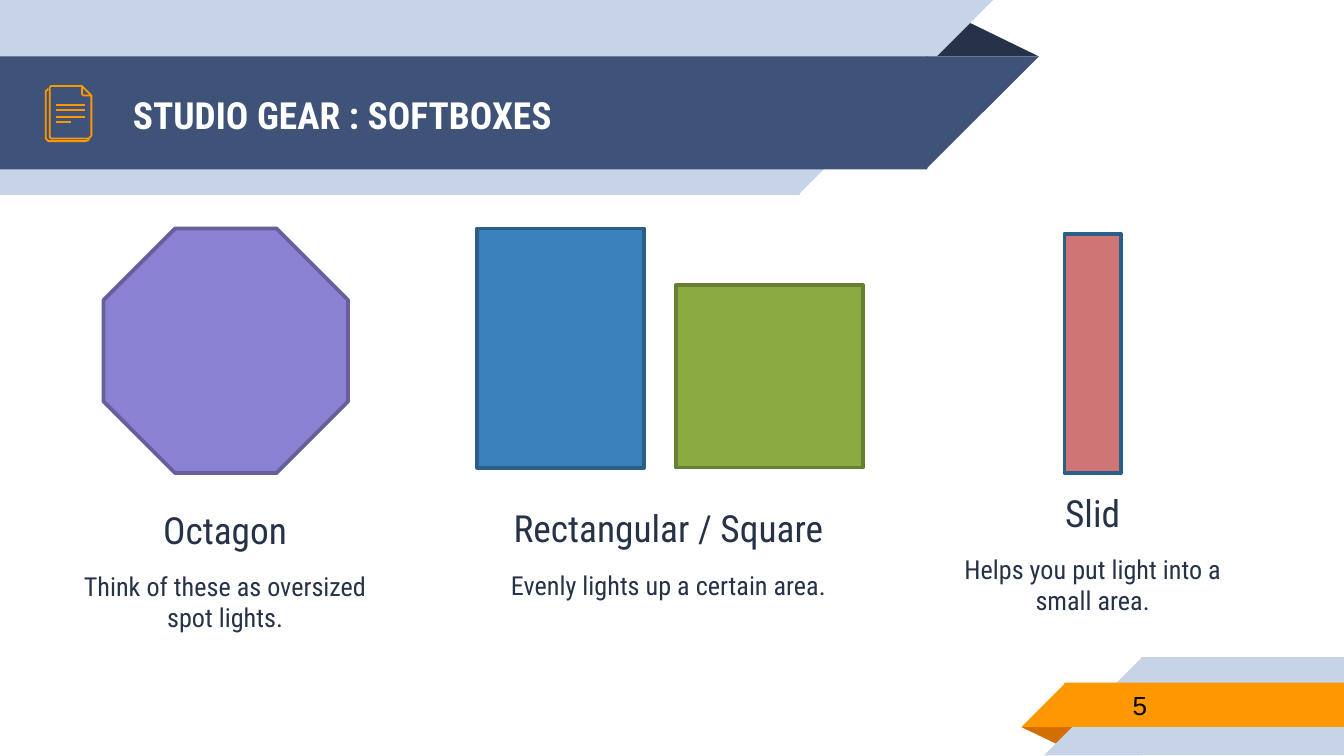
from collections import namedtuple
from dataclasses import dataclass

from lxml.etree import SubElement
from pptx import Presentation
from pptx.dml.color import RGBColor
from pptx.enum.shapes import MSO_CONNECTOR, MSO_SHAPE
from pptx.enum.text import MSO_ANCHOR, PP_ALIGN
from pptx.oxml.ns import qn
from pptx.util import Emu, Pt

PX = 9144
SEAM = 1

Box = namedtuple("Box", "left top width height")
Softbox = namedtuple("Softbox", "outline box fill line")


@dataclass(frozen=True)
class Theme:
    font: str = "Roboto Condensed"
    number_font: str = "Arial"
    heading_size: int = 20
    note_size: int = 14
    caption_gap: int = 10
    inset: int = 10
    icon_line: float = 0.96
    softbox_line: int = 2
    white: str = "FFFFFF"
    black: str = "000000"
    ink: str = "263248"
    navy: str = "3F5378"
    pale: str = "C7D3E6"
    orange: str = "FF9800"
    burnt: str = "D26F00"
    violet: str = "8B81D2"
    violet_edge: str = "675F9B"
    blue: str = "3A81BA"
    blue_edge: str = "2B5F8A"
    green: str = "8BAB42"
    green_edge: str = "677F31"
    rose: str = "D07576"


THEME = Theme()


def px(value):
    return Emu(value * PX)


def color(value):
    return RGBColor.from_string(value)


def inside(box, left, top, width, height):
    return Box(box.left + left, box.top + top, width, height)


def add_outline(slide, outline, box, fill, flip=None):
    shape = slide.shapes.add_shape(outline, *map(px, box))
    shape.shadow.inherit = False
    shape.fill.solid()
    shape.fill.fore_color.rgb = color(fill)
    shape.line.fill.background()
    if flip:
        shape._element.spPr.find(qn("a:xfrm")).set(flip, "1")
    return shape


def add_text(slide, box, lines, ink, font=THEME.font, align=PP_ALIGN.LEFT, gap=0, bold=False):
    frame = slide.shapes.add_textbox(*map(px, box)).text_frame
    frame.word_wrap = True
    frame.vertical_anchor = MSO_ANCHOR.MIDDLE
    frame.margin_left = frame.margin_right = px(THEME.inset)
    frame.margin_top = frame.margin_bottom = px(THEME.inset)
    for index, (words, size) in enumerate(lines):
        paragraph = frame.paragraphs[0] if index == 0 else frame.add_paragraph()
        paragraph.text = words
        paragraph.alignment = align
        paragraph.space_after = Pt(gap)
        paragraph.font.name = font
        paragraph.font.size = Pt(size)
        paragraph.font.bold = bold
        paragraph.font.color.rgb = color(ink)


def add_band(slide, box, top, length, height, fill):
    add_outline(slide, MSO_SHAPE.RECTANGLE, inside(box, 0, top, length + SEAM, height), fill)
    add_outline(slide, MSO_SHAPE.RIGHT_TRIANGLE,
                inside(box, length, top, height, height), fill, "flipV")


def header(slide, box, title):
    fold = add_outline(slide, MSO_SHAPE.ISOSCELES_TRIANGLE,
                       inside(box, 688, 14, 85, 28), THEME.ink)
    fold.adjustments[0] = 0.324
    add_band(slide, box, 0, 594, box.height, THEME.pale)
    add_band(slide, box, 42, 689, 84, THEME.navy)
    add_text(slide, inside(box, 89, 43, 601, 84), [(title, THEME.heading_size)],
             THEME.white, bold=True)
    document_icon(slide, inside(box, 34, 64, 34, 41))


def document_icon(slide, box):
    back_page = [(32, 39), (32, 40), (30, 41), (2, 41), (0, 39), (0, 4), (1, 3), (2, 2)]
    front_page = [(34, 7), (34, 37), (33, 38), (32, 39), (4, 39), (3, 38),
                  (3, 1), (4, 0), (27, 0)]
    folded_corner = [(27, 6), (27, 0), (34, 7), (29, 7), (28, 7)]
    for points, closed in ((back_page, False), (front_page, False), (folded_corner, True)):
        start, *rest = [(box.left + x, box.top + y) for x, y in points]
        builder = slide.shapes.build_freeform(*start, scale=PX)
        builder.add_line_segments(rest, close=closed)
        page = builder.convert_to_shape()
        page.shadow.inherit = False
        page.fill.background()
        icon_stroke(page)
    for y, length in ((14, 21), (18, 21), (23, 21), (27, 11)):
        left, top = box.left + 8, box.top + y
        rule = slide.shapes.add_connector(
            MSO_CONNECTOR.STRAIGHT, px(left + length), px(top), px(left), px(top))
        icon_stroke(rule)
        SubElement(rule._element.spPr, qn("a:effectLst"))


def icon_stroke(shape):
    shape.line.color.rgb = color(THEME.orange)
    shape.line.width = Pt(THEME.icon_line)


def footer(slide, box, number):
    fold = add_outline(slide, MSO_SHAPE.ISOSCELES_TRIANGLE,
                       inside(box, 0, 52, 43, 14), THEME.burnt)
    fold.rotation = 180
    fold.adjustments[0] = 0.324
    for left, top, height, fill in ((17, 0, box.height, THEME.pale), (0, 19, 33, THEME.orange)):
        start = left + height - SEAM
        add_outline(slide, MSO_SHAPE.RECTANGLE,
                    inside(box, start, top, box.width - start, height), fill)
        add_outline(slide, MSO_SHAPE.RIGHT_TRIANGLE,
                    inside(box, left, top, height, height), fill, "flipH")
    add_text(slide, inside(box, 73, 18, 163, 35), [(number, THEME.note_size)],
             THEME.black, font=THEME.number_font)


def softbox_column(slide, box, softboxes, caption_height, heading, note):
    for softbox in softboxes:
        shape = add_outline(slide, softbox.outline, inside(box, *softbox.box), softbox.fill)
        shape.line.color.rgb = color(softbox.line)
        shape.line.width = Pt(THEME.softbox_line)
    caption = inside(box, 0, box.height - caption_height, box.width, caption_height)
    add_text(slide, caption, [(heading, THEME.heading_size), (note, THEME.note_size)],
             THEME.ink, align=PP_ALIGN.CENTER, gap=THEME.caption_gap)


def main():
    deck = Presentation()
    deck.slide_width = px(1000)
    deck.slide_height = Emu(deck.slide_width * 9 // 16)
    slide = deck.slides.add_slide(deck.slide_layouts[6])

    header(slide, Box(0, 0, 773, 145), "STUDIO GEAR : SOFTBOXES")
    footer(slide, Box(760, 489, 240, 73), "5")

    octagon = Softbox(MSO_SHAPE.OCTAGON, (43, 0, 182, 182), THEME.violet, THEME.violet_edge)
    rectangle = Softbox(MSO_SHAPE.RECTANGLE, (14, 0, 124, 178), THEME.blue, THEME.blue_edge)
    square = Softbox(MSO_SHAPE.RECTANGLE, (162, 42, 139, 136), THEME.green, THEME.green_edge)
    strip = Softbox(MSO_SHAPE.RECTANGLE, (98, 4, 42, 178), THEME.rose, THEME.blue_edge)

    softbox_column(slide, Box(34, 170, 267, 318), [octagon], 128,
                   "Octagon", "Think of these as oversized spot lights.")
    softbox_column(slide, Box(341, 170, 313, 290), [rectangle, square], 97,
                   "Rectangular / Square", "Evenly lights up a certain area.")
    softbox_column(slide, Box(694, 170, 238, 290), [strip], 97,
                   "Slid", "Helps you put light into a small area.")

    deck.save("out.pptx")


if __name__ == "__main__":
    main()
